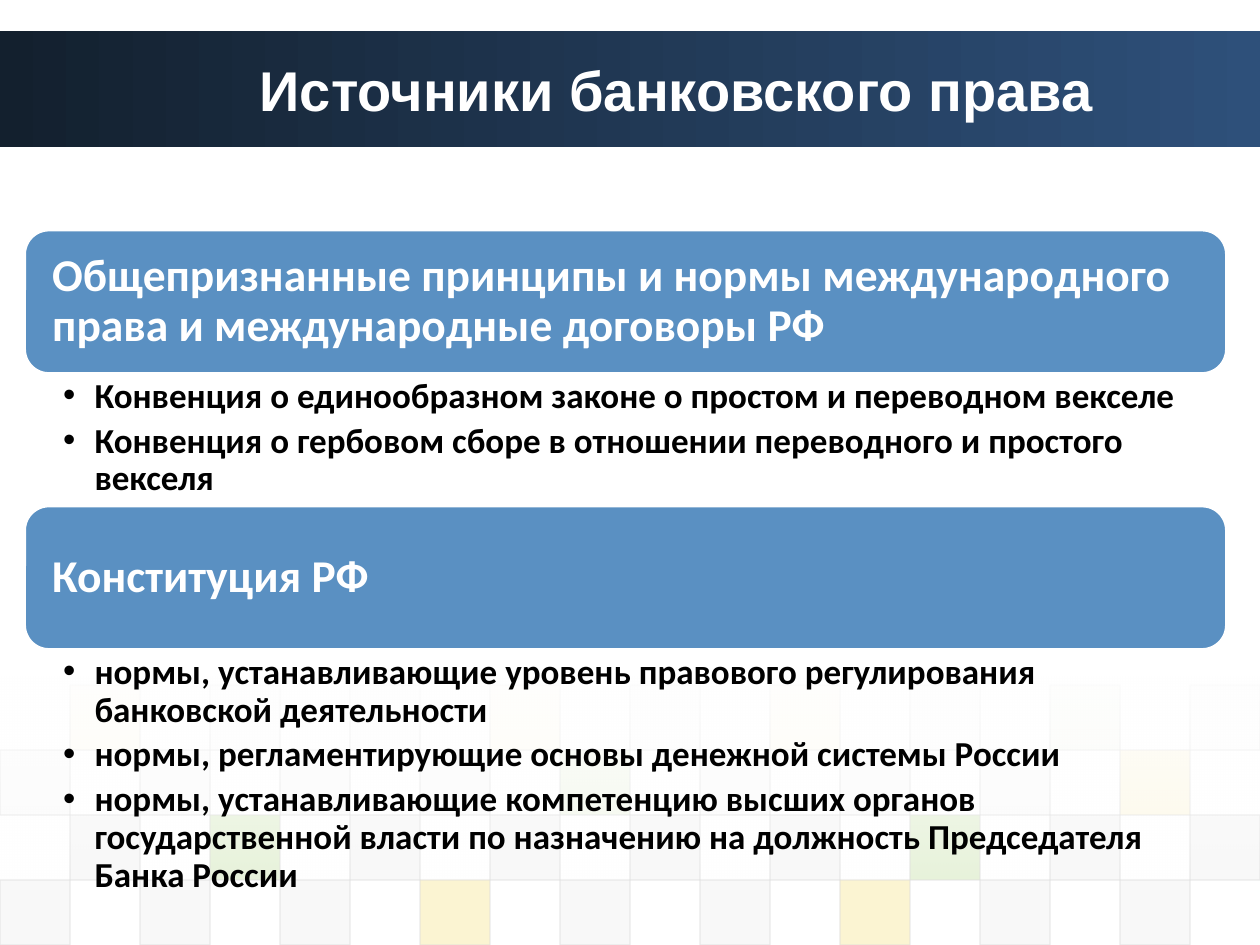
from lxml import etree
from pptx import Presentation
from pptx import util as u
from pptx.dml import color
from pptx.enum import shapes, text
from pptx.oxml import ns

COLORS = {
    "white": "FFFFFF", "black": "000000", "blue": "5A90C2",
    "band_dark": "13202E", "band_light": "2E507A",
    "D": "DDDDDD", "E": "EAEAEA", "G": "8AC246", "Y": "EFC821",
}
TITLE = {"name": "Arial", "size": u.Pt(32), "bold": True}
HEADING = {"name": "Calibri", "size": u.Pt(26), "bold": True}
ITEM = {"name": "Calibri", "size": u.Pt(20), "bold": True}

TILE_COLUMNS = 18
TILES_TOP = 72.5
TILE_ROWS = [
    (1, "YEEYDYEGE", 5),
    (0, "DDDDGDDDY", 10),
    (1, "DGDDDDGDD", 20),
    (0, "DDDYDDYDD", 20),
]

LEFT, WIDTH = 2, 95.3
SECTIONS_TOP, HEADING_HEIGHT = 24.4, 15.07
SECTIONS = [
    ("Общепризнанные принципы и нормы международного права и международные договоры РФ",
     ["Конвенция о единообразном законе о простом и переводном векселе",
      "Конвенция о гербовом сборе в отношении переводного и простого векселя"],
     14.13),
    ("Конституция РФ",
     ["нормы, устанавливающие уровень правового регулирования банковской деятельности",
      "нормы, регламентирующие основы денежной системы России",
      "нормы, устанавливающие компетенцию высших органов государственной власти "
      "по назначению на должность Председателя Банка России"],
     27.47),
]


def rgb(name):
    return color.RGBColor.from_string(COLORS[name])


def assign(target, values):
    for name, value in values.items():
        setattr(target, name, value)


class SlideBuilder:
    def __init__(self, deck):
        self.deck = deck
        self.slide = deck.slides.add_slide(deck.slide_layouts[3])

    def area(self, left, top, width, height):
        across, down = self.deck.slide_width / 100, self.deck.slide_height / 100
        return {"left": round(left * across), "top": round(top * down),
                "width": round(width * across), "height": round(height * down)}

    def box(self, place, kind=shapes.MSO_SHAPE.RECTANGLE):
        box = self.slide.shapes.add_shape(kind, **self.area(*place))
        box.shadow.inherit = False
        return box

    def paint(self, box, fill, line, width):
        box.fill.solid()
        box.fill.fore_color.rgb = rgb(fill)
        box.line.color.rgb = rgb(line)
        box.line.width = u.Pt(width)

    def opacity(self, box, *percents):
        tints = box._element.spPr.iter(ns.qn("a:srgbClr"))
        for tint, percent in zip(tints, percents):
            etree.SubElement(tint, ns.qn("a:alpha"), val=str(percent * 1000))

    def gradient(self, place, start, end, angle):
        box = self.box(place)
        box.line.fill.background()
        box.fill.gradient()
        box.fill.gradient_angle = angle
        for stop, name in zip(box.fill.gradient_stops, (start, end)):
            stop.color.rgb = rgb(name)
        return box

    def tile(self, column, row, name, percent):
        width = 100 / TILE_COLUMNS
        height = (100 - TILES_TOP) / len(TILE_ROWS)
        box = self.box((column * width, TILES_TOP + row * height, width, height))
        self.paint(box, name, "D", 0.75)
        self.opacity(box, percent, 60)

    def add_words(self, para, words, style, name):
        span = para.add_run()
        span.text = words
        assign(span.font, style)
        span.font.color.rgb = rgb(name)

    def placeholder(self, index, place):
        holder = self.slide.placeholders[index]
        assign(holder, self.area(*place))
        self.slide.shapes._spTree.append(holder._element)
        return holder.text_frame

    def title(self, words, place):
        frame = self.placeholder(0, place)
        assign(frame, {"word_wrap": True, "vertical_anchor": text.MSO_ANCHOR.MIDDLE,
                       "auto_size": text.MSO_AUTO_SIZE.NONE})
        para = frame.paragraphs[0]
        para.alignment = text.PP_ALIGN.CENTER
        self.add_words(para, words, TITLE, "white")

    def heading(self, words, place):
        box = self.box(place, shapes.MSO_SHAPE.ROUNDED_RECTANGLE)
        self.paint(box, "blue", "white", 1)
        inset = u.Inches(0.16)
        assign(box.text_frame, {
            "word_wrap": True, "vertical_anchor": text.MSO_ANCHOR.MIDDLE,
            "margin_left": inset, "margin_right": inset,
            "margin_top": inset, "margin_bottom": inset})
        para = box.text_frame.paragraphs[0]
        assign(para, {"alignment": text.PP_ALIGN.LEFT, "line_spacing": 0.9})
        self.add_words(para, words, HEADING, "white")

    def bullets(self, index, items, place):
        frame = self.placeholder(index, place)
        assign(frame, {
            "word_wrap": True, "vertical_anchor": text.MSO_ANCHOR.TOP,
            "auto_size": text.MSO_AUTO_SIZE.NONE,
            "margin_left": u.Inches(0.3), "margin_right": u.Inches(0.2),
            "margin_top": u.Inches(0.04), "margin_bottom": u.Inches(0.04)})
        for number, words in enumerate(items):
            para = frame.add_paragraph() if number else frame.paragraphs[0]
            props = para._p.get_or_add_pPr()
            indent = u.Inches(0.25)
            props.set("marL", str(indent))
            props.set("indent", str(-indent))
            etree.SubElement(props, ns.qn("a:buChar"), char="•")
            assign(para, {"level": 1, "line_spacing": 0.9,
                          "space_before": u.Pt(0), "space_after": u.Pt(4)})
            self.add_words(para, words, ITEM, "black")


def main():
    deck = Presentation()
    deck.slide_width, deck.slide_height = u.Inches(10), u.Inches(7.5)
    builder = SlideBuilder(deck)

    builder.gradient((0, 3.33, 100, 12.27), "band_dark", "band_light", 0)
    for row, (offset, names, percent) in enumerate(TILE_ROWS):
        for step, name in enumerate(names):
            builder.tile(offset + 2 * step, row, name, percent)
    fade = builder.gradient((0, 71.6, 100, 21.6), "white", "white", 270)
    builder.opacity(fade, 90, 0)

    builder.title("Источники банковского права", (13.3, 3.33, 80.8, 12.27))
    top = SECTIONS_TOP
    for index, (heading, items, height) in enumerate(SECTIONS, start=1):
        builder.heading(heading, (LEFT, top, WIDTH, HEADING_HEIGHT))
        top += HEADING_HEIGHT
        builder.bullets(index, items, (LEFT, top, WIDTH, height))
        top += height

    deck.save("out.pptx")


if __name__ == "__main__":
    main()
